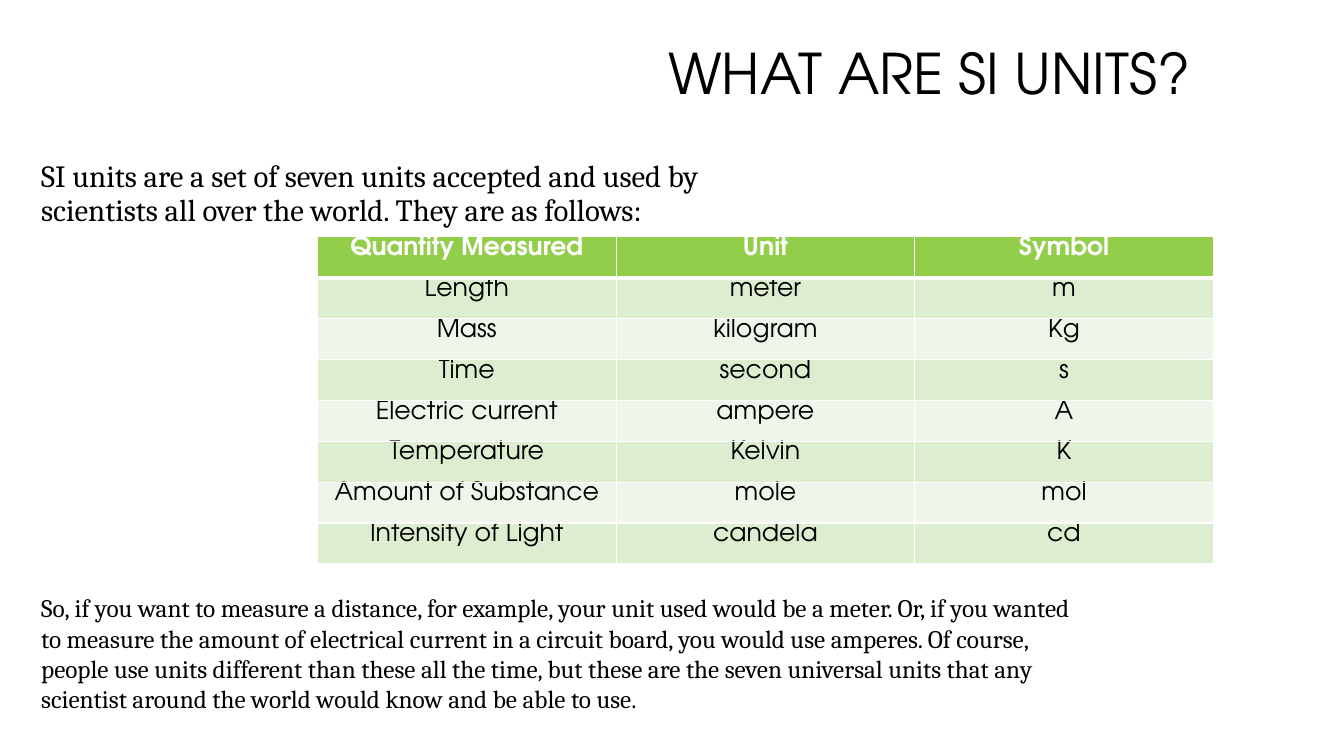
from lxml import etree
from pptx import Presentation
from pptx.dml.color import RGBColor
from pptx.enum.text import MSO_ANCHOR, PP_ALIGN
from pptx.oxml.ns import qn
from pptx.util import Pt

LEFT, CENTER, RIGHT = PP_ALIGN.LEFT, PP_ALIGN.CENTER, PP_ALIGN.RIGHT
TOP, MIDDLE = MSO_ANCHOR.TOP, MSO_ANCHOR.MIDDLE
SANS, SERIF = "TeX Gyre Adventor", "Cambria"
BLACK, WHITE = "000000", "FFFFFF"
HEADER_FILL, BAND_FILLS = "92CE4A", ("DCEDD0", "EEF6E9")


def color(hex_code):
    return RGBColor.from_string(hex_code)


def write(frame, text, align, spacing, font_color, **font_values):
    frame.word_wrap = True
    para = frame.paragraphs[0]
    para.alignment = align
    para.line_spacing = spacing
    para.space_before = Pt(0)
    span = para.add_run()
    span.text = text
    span.font.color.rgb = color(font_color)
    for name, value in font_values.items():
        setattr(span.font, name, value)


deck = Presentation()
deck.slide_width, deck.slide_height = Pt(960), Pt(540)
page = deck.slides.add_slide(deck.slide_layouts[5])
page.background.fill.solid()
page.background.fill.fore_color.rgb = color(WHITE)

# Title
title = page.shapes.title
title.left, title.top, title.width, title.height = Pt(179.3), Pt(23.8), Pt(678.2), Pt(61.2)
title.text_frame.vertical_anchor = MIDDLE
write(title.text_frame, "WHAT ARE SI UNITS?", RIGHT, 0.9, BLACK, size=Pt(40), name=SANS)

# Introduction and closing text
passages = [
    (111.6, 524.2, 147.6, 22, 0.9,
     "SI units are a set of seven units accepted and used by scientists all over the world. "
     "They are as follows:"),
    (419.8, 759.6, 94.3, 18, 1.0,
     "So, if you want to measure a distance, for example, your unit used would be a meter. "
     "Or, if you wanted to measure the amount of electrical current in a circuit board, you "
     "would use amperes. Of course, people use units different than these all the time, but "
     "these are the seven universal units that any scientist around the world would know and "
     "be able to use."),
]
for top, width, height, size, spacing, text in passages:
    box = page.shapes.add_textbox(Pt(22.3), Pt(top), Pt(width), Pt(height))
    box.text_frame.vertical_anchor = TOP
    write(box.text_frame, text, LEFT, spacing, BLACK, size=Pt(size), name=SERIF)

# Table of units
units = [
    ("Quantity Measured", "Unit", "Symbol"),
    ("Length", "meter", "m"),
    ("Mass", "kilogram", "Kg"),
    ("Time", "second", "s"),
    ("Electric current", "ampere", "A"),
    ("Temperature", "Kelvin", "K"),
    ("Amount of Substance", "mole", "mol"),
    ("Intensity of Light", "candela", "cd"),
]
COLUMN_WIDTH, ROW_HEIGHT = 213.3, 29.2
table = page.shapes.add_table(
    len(units), 3, Pt(226.8), Pt(169.2), Pt(3 * COLUMN_WIDTH), Pt(len(units) * ROW_HEIGHT)
).table
for column in table.columns:
    column.width = Pt(COLUMN_WIDTH)

for row_index, values in enumerate(units):
    table.rows[row_index].height = Pt(ROW_HEIGHT)
    is_header = row_index == 0
    fill_color = HEADER_FILL if is_header else BAND_FILLS[(row_index - 1) % 2]
    for column_index, value in enumerate(values):
        cell = table.cell(row_index, column_index)
        cell.margin_top = cell.margin_bottom = Pt(0)
        cell.vertical_anchor = TOP
        write(cell.text_frame, value, CENTER, 1.0, WHITE if is_header else BLACK,
              size=Pt(18), name=SANS, bold=is_header)

        # White rules, thicker between the header and the first row
        line_widths = {
            "a:lnL": 1,
            "a:lnR": 1,
            "a:lnT": 3 if row_index == 1 else 1,
            "a:lnB": 3 if is_header else 1,
        }
        properties = cell._tc.get_or_add_tcPr()
        for tag, line_width in line_widths.items():
            line = etree.SubElement(properties, qn(tag), w=str(Pt(line_width)))
            line_fill = etree.SubElement(line, qn("a:solidFill"))
            etree.SubElement(line_fill, qn("a:srgbClr"), val=WHITE)
        cell.fill.solid()
        cell.fill.fore_color.rgb = color(fill_color)

deck.save("out.pptx")
